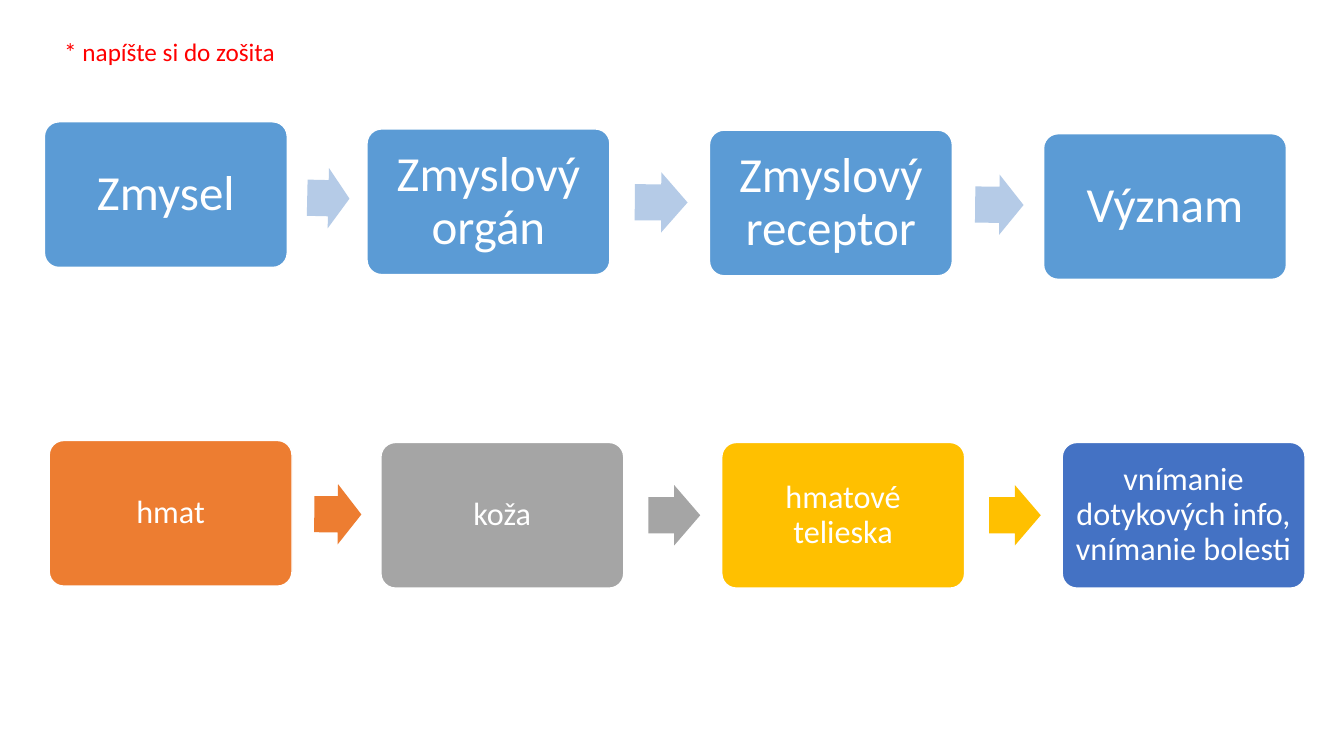
from dataclasses import dataclass
from itertools import pairwise
from math import atan2, degrees

from pptx import Presentation
from pptx import util as u
from pptx.dml.color import RGBColor
from pptx.enum import shapes, text

COLORS = {
    "white": "FFFFFF", "red": "FF0000", "blue": "5B9BD5", "pale": "B5CBE7",
    "orange": "ED7D31", "gray": "A5A5A5", "gold": "FFC000", "navy": "4472C4",
}
FONT = "Calibri"
BOX_WIDTH, BOX_HEIGHT = 6.12, 3.67
ARROW_HEIGHT = 1.52
ARROW_SHARE = 0.53  # part of the gap between two boxes that an arrow fills


@dataclass
class Step:
    label: str
    left: float
    top: float
    color: str
    arrow_color: str


@dataclass
class Flow:
    steps: list[Step]
    size: int
    inset: float


FLOWS = [
    Flow([
        Step("Zmysel", 1.12, 3.07, "blue", "pale"),
        Step("Zmyslový orgán", 9.25, 3.25, "blue", "pale"),
        Step("Zmyslový receptor", 17.88, 3.28, "blue", "pale"),
        Step("Význam", 26.3, 3.37, "blue", "pale"),
    ], size=35, inset=0.37),
    Flow([
        Step("hmat", 1.24, 11.1, "orange", "orange"),
        Step("koža", 9.6, 11.15, "gray", "gray"),
        Step("hmatové telieska", 18.19, 11.15, "gold", "gold"),
        Step("vnímanie dotykových info, vnímanie bolesti", 26.77, 11.15, "navy", "navy"),
    ], size=23, inset=0.22),
]


def rgb(name: str) -> RGBColor:
    return RGBColor.from_string(COLORS[name])


def write(shape, content: str, *, size: int, color: str, align=text.PP_ALIGN.LEFT,
          spacing: float = 1.0) -> None:
    para = shape.text_frame.paragraphs[0]
    para.alignment = align
    para.line_spacing = spacing
    span = para.add_run()
    span.text = content
    span.font.name = FONT
    span.font.size = u.Pt(size)
    span.font.color.rgb = rgb(color)


def add_filled(page, kind, left: float, top: float, width: float, height: float, color: str):
    shape = page.shapes.add_shape(kind, u.Cm(left), u.Cm(top), u.Cm(width), u.Cm(height))
    shape.shadow.inherit = False
    shape.fill.solid()
    shape.fill.fore_color.rgb = rgb(color)
    return shape


def add_box(page, step: Step, flow: Flow) -> None:
    box = add_filled(page, shapes.MSO_SHAPE.ROUNDED_RECTANGLE, step.left, step.top,
                     BOX_WIDTH, BOX_HEIGHT, step.color)
    box.adjustments[0] = 0.1
    box.line.color.rgb = rgb("white")
    box.line.width = u.Pt(1)
    frame = box.text_frame
    frame.word_wrap = True
    frame.vertical_anchor = text.MSO_ANCHOR.MIDDLE
    frame.margin_left = frame.margin_right = u.Cm(flow.inset)
    frame.margin_top = frame.margin_bottom = u.Cm(flow.inset)
    write(box, step.label, size=flow.size, color="white",
          align=text.PP_ALIGN.CENTER, spacing=0.9)


def add_arrow(page, start: Step, end: Step) -> None:
    """Fill part of the gap between two boxes, tilted along their centre line."""
    gap = end.left - start.left - BOX_WIDTH
    left = start.left + BOX_WIDTH + gap / 4
    top = (start.top + end.top + BOX_HEIGHT - ARROW_HEIGHT) / 2
    arrow = add_filled(page, shapes.MSO_SHAPE.RIGHT_ARROW, left, top + BOX_HEIGHT / 2
                       - ARROW_HEIGHT / 2 - (BOX_HEIGHT - ARROW_HEIGHT) / 2,
                       gap * ARROW_SHARE, ARROW_HEIGHT, start.arrow_color)
    arrow.adjustments[0], arrow.adjustments[1] = 0.6, 0.5
    arrow.rotation = degrees(atan2(end.top - start.top, end.left - start.left))
    arrow.line.fill.background()


def add_note(page) -> None:
    note = page.shapes.add_textbox(u.Cm(1.37), u.Cm(0.79), u.Cm(5.89), u.Cm(1.03))
    note.text_frame.word_wrap = False
    note.text_frame.auto_size = text.MSO_AUTO_SIZE.SHAPE_TO_FIT_TEXT
    write(note, "* napíšte si do zošita", size=18, color="red")


def main() -> None:
    deck = Presentation()
    deck.slide_width, deck.slide_height = u.Cm(33.87), u.Cm(19.05)
    page = deck.slides.add_slide(deck.slide_layouts[6])
    add_note(page)
    for flow in FLOWS:
        for step in flow.steps:
            add_box(page, step, flow)
        for start, end in pairwise(flow.steps):
            add_arrow(page, start, end)
    deck.save("out.pptx")


if __name__ == "__main__":
    main()
